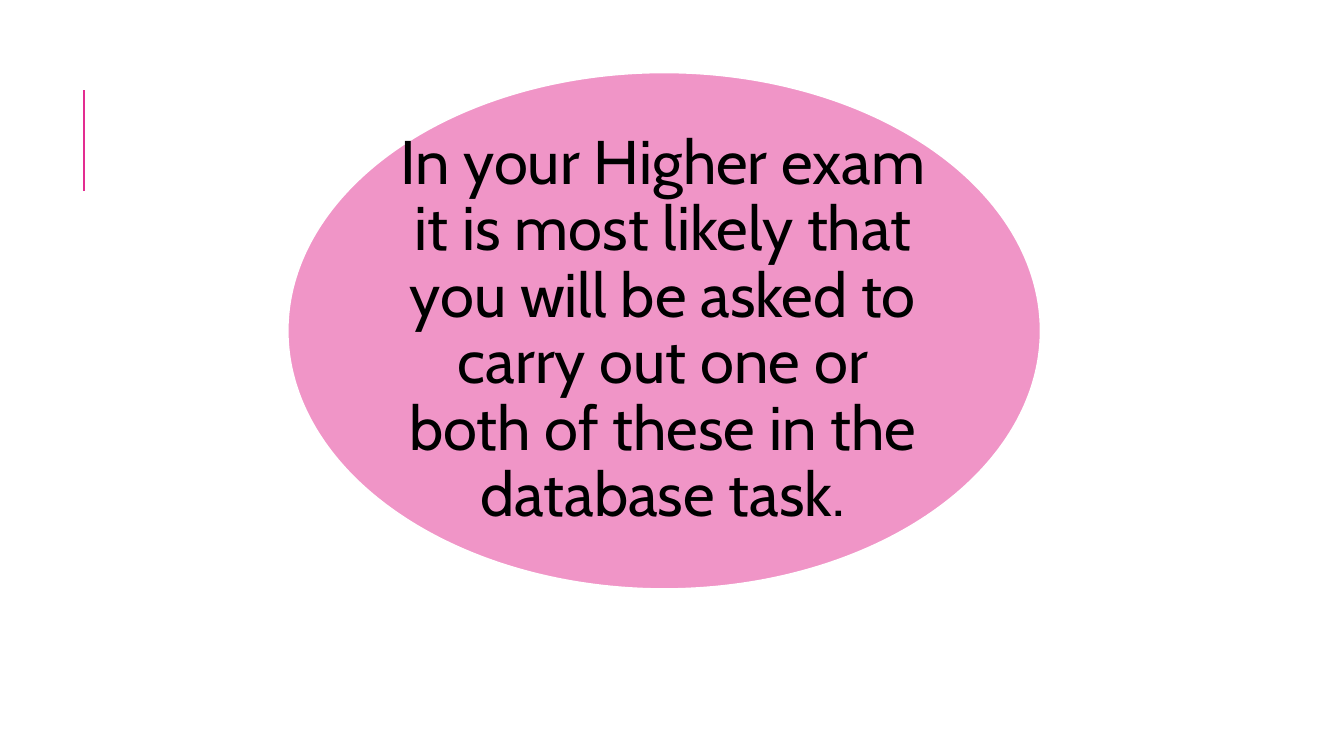
from dataclasses import dataclass

from lxml.etree import SubElement
from pptx import Presentation
from pptx.dml.color import RGBColor
from pptx.enum.shapes import MSO_CONNECTOR, MSO_SHAPE
from pptx.enum.text import MSO_ANCHOR, PP_ALIGN
from pptx.oxml.ns import qn
from pptx.util import Emu, Pt


@dataclass(frozen=True)
class Theme:
    accent: RGBColor = RGBColor.from_string("E32D91")
    outline: RGBColor = RGBColor.from_string("FFFFFF")
    text: RGBColor = RGBColor.from_string("000000")
    font: str = "Cabin"
    message_size: int = 44
    accent_opacity: int = 50


THEME = Theme()
MESSAGE = (
    "In your Higher exam it is most likely that you will be asked to "
    "carry out one or both of these in the database task."
)


def px(length):
    return Emu(length * 9525)


def apply_format(target, values):
    for name, value in values.items():
        setattr(target, name, value)


def add_rule(page, x, top, bottom):
    rule = page.shapes.add_connector(
        MSO_CONNECTOR.STRAIGHT, px(x), px(bottom), px(x), px(top)
    )
    rule.line.color.rgb = THEME.accent
    rule.line.width = Pt(1.5)
    SubElement(rule._element.spPr, qn("a:effectLst"))


def add_ellipse(page, *bounds):
    ellipse = page.shapes.add_shape(MSO_SHAPE.OVAL, *map(px, bounds))
    ellipse.shadow.inherit = False
    ellipse.fill.solid()
    ellipse.fill.fore_color.rgb = THEME.accent
    ellipse.line.color.rgb = THEME.outline
    ellipse.line.width = Pt(1.25)
    # Translucent fill
    color = ellipse._element.spPr.find(qn("a:solidFill"))[0]
    SubElement(color, qn("a:alpha"), val=str(THEME.accent_opacity * 1000))


def add_message(page, text, *bounds):
    box = page.shapes.add_textbox(*map(px, bounds))
    frame = box.text_frame
    apply_format(frame, {
        "word_wrap": True,
        "vertical_anchor": MSO_ANCHOR.MIDDLE,
        "margin_left": 0,
        "margin_top": 0,
        "margin_right": 0,
        "margin_bottom": 0,
    })
    para = frame.paragraphs[0]
    apply_format(para, {"alignment": PP_ALIGN.CENTER, "line_spacing": 0.9})
    span = para.add_run()
    span.text = text
    apply_format(span.font, {"name": THEME.font, "size": Pt(THEME.message_size)})
    span.font.color.rgb = THEME.text


def main():
    deck = Presentation()
    apply_format(deck, {"slide_width": px(1280), "slide_height": px(720)})
    page = deck.slides.add_slide(deck.slide_layouts[6])

    # Accent rule at the left margin
    add_rule(page, 80, 86, 182)

    # Exam advice inside the ellipse
    add_ellipse(page, 274, 69, 717, 492)
    add_message(page, MESSAGE, 378, 141, 507, 348)

    deck.save("out.pptx")


if __name__ == "__main__":
    main()
